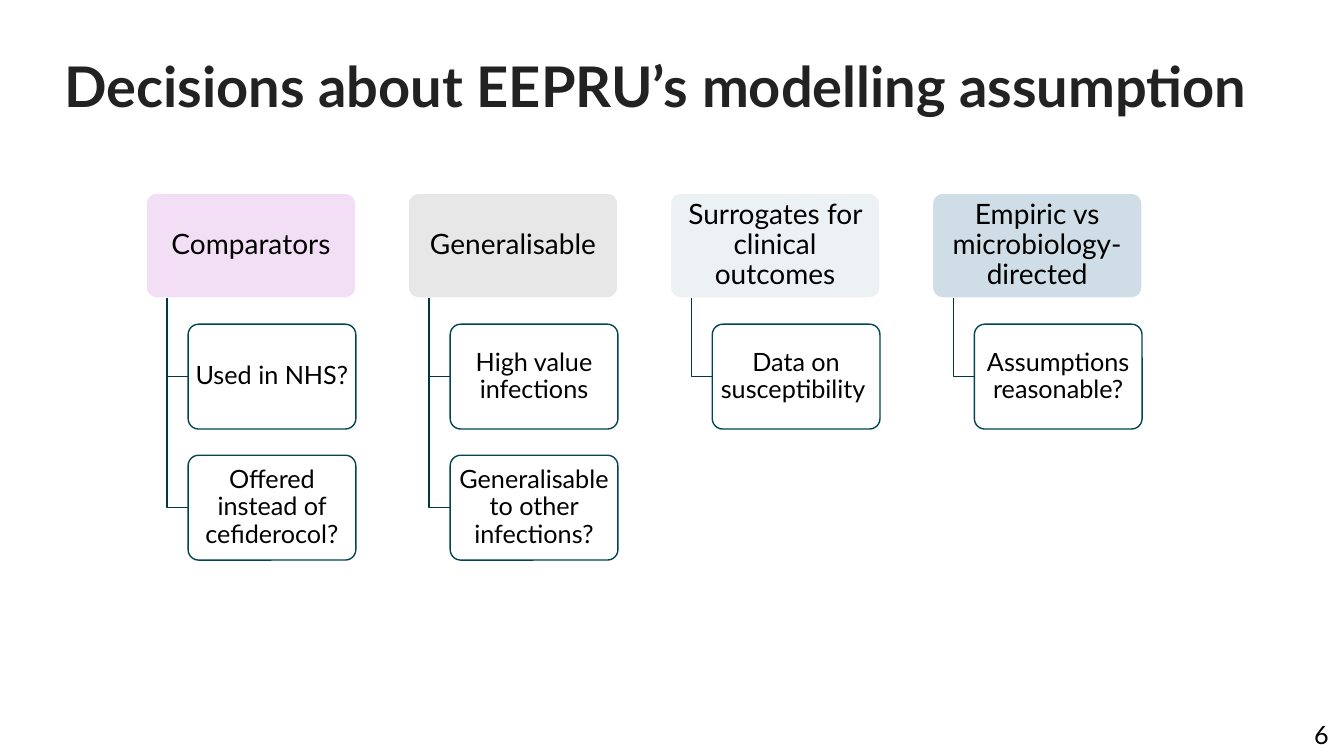
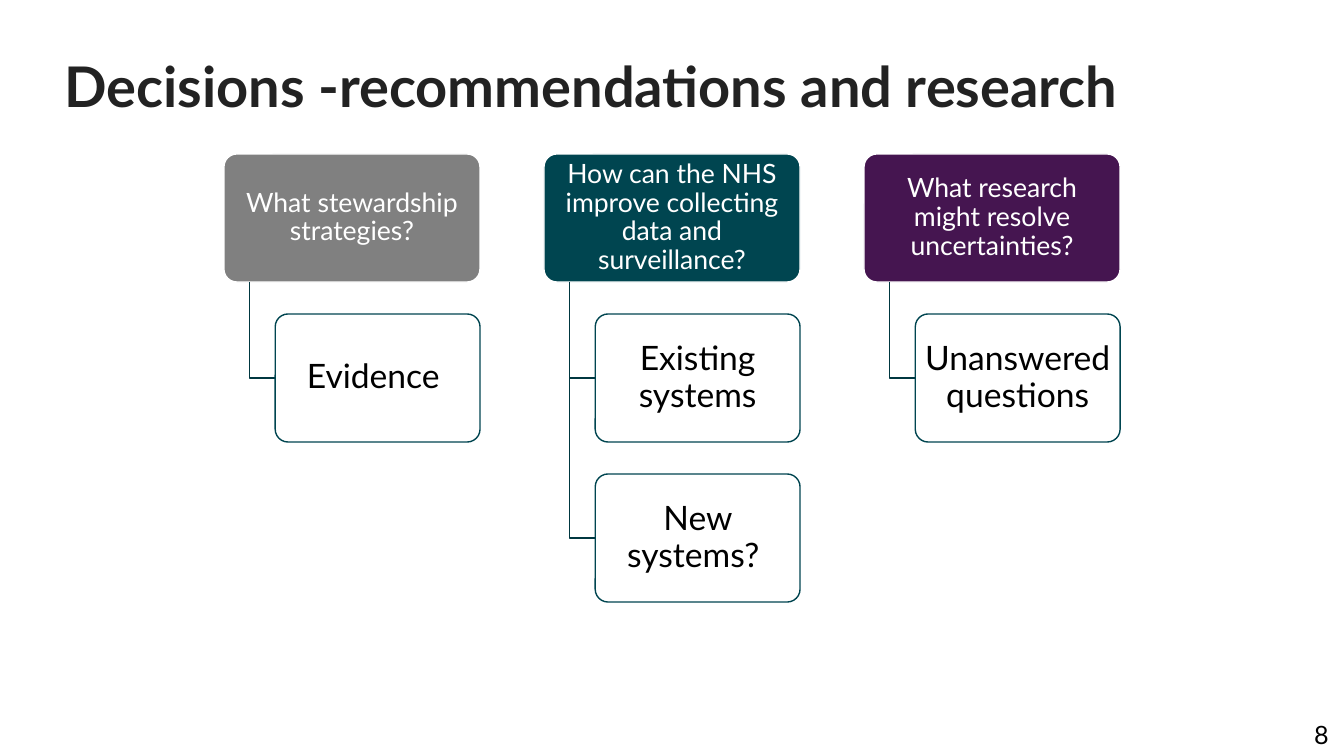
from dataclasses import dataclass

from pptx import Presentation
from pptx.dml.color import RGBColor
from pptx.enum.shapes import MSO_SHAPE as SHAPE
from pptx.enum.text import MSO_ANCHOR as ANCHOR, PP_ALIGN as ALIGN
from pptx.shapes.autoshape import Shape
from pptx.slide import Slide
from pptx.util import Pt

FONT = "Lato"
BLACK = RGBColor(0x00, 0x00, 0x00)
WHITE = RGBColor(0xFF, 0xFF, 0xFF)
TITLE_INK = RGBColor(0x22, 0x22, 0x22)
TEAL = RGBColor(0x00, 0x45, 0x50)
DARK_TEAL = RGBColor(0x00, 0x37, 0x40)
PURPLE = RGBColor(0x45, 0x15, 0x50)
GREY = RGBColor(0x80, 0x80, 0x80)
LILAC = RGBColor(0xF2, 0xDF, 0xF6)
LIGHT_GREY = RGBColor(0xE7, 0xE7, 0xE7)
PALE_TEAL = RGBColor(0xEC, 0xF2, 0xF3)
PALE_BLUE = RGBColor(0xCE, 0xDD, 0xE6)


@dataclass
class Topic:
    heading: str
    fill: RGBColor
    questions: list[str]


@dataclass
class Hierarchy:
    """Topic columns; every other measure follows from the heading width."""
    left: float
    top: float
    width: float
    heading_size: float
    heading_ink: RGBColor
    question_size: float
    topics: list[Topic]


@dataclass
class Page:
    number: int
    title: str
    hierarchy: Hierarchy


PAGES = [
    Page(6, "Decisions about EEPRU’s modelling assumption",
         Hierarchy(104.4, 138, 149.76, 20, BLACK, 18, [
             Topic("Comparators", LILAC,
                   ["Used in NHS?", "Offered instead of cefiderocol?"]),
             Topic("Generalisable", LIGHT_GREY,
                   ["High value infections", "Generalisable to other infections?"]),
             Topic("Surrogates for clinical outcomes", PALE_TEAL,
                   ["Data on susceptibility "]),
             Topic("Empiric vs microbiology-directed", PALE_BLUE,
                   ["Assumptions reasonable?"]),
         ])),
    Page(8, "Decisions -recommendations and research",
         Hierarchy(160, 110, 182.88, 19, WHITE, 24, [
             Topic("What stewardship strategies?", GREY, ["Evidence "]),
             Topic("How can the NHS improve collecting data and surveillance?", TEAL,
                   ["Existing systems", "New systems? "]),
             Topic("What research might resolve uncertainties?", PURPLE,
                   ["Unanswered questions"]),
         ])),
]


def write(s: Shape, text: str, size: float, ink: RGBColor, align: ALIGN,
          bold: bool = False, spacing: float = 1.0) -> None:
    tf = s.text_frame
    tf.word_wrap = True
    p = tf.paragraphs[0]
    p.text = text
    p.alignment = align
    p.line_spacing = spacing
    p.font.name, p.font.size, p.font.bold = FONT, Pt(size), bold
    p.font.color.rgb = ink


def set_line(s: Shape, color: RGBColor) -> None:
    s.shadow.inherit = False
    s.line.color.rgb = color
    s.line.width = Pt(1)


def add_box(slide: Slide, x: float, y: float, w: float, h: float, text: str,
            size: float, ink: RGBColor, fill: RGBColor, line: RGBColor) -> None:
    s = slide.shapes.add_shape(SHAPE.ROUNDED_RECTANGLE, Pt(x), Pt(y), Pt(w), Pt(h))
    s.adjustments[0] = 0.1
    s.fill.solid()
    s.fill.fore_color.rgb = fill
    set_line(s, line)
    tf = s.text_frame
    tf.vertical_anchor = ANCHOR.MIDDLE
    tf.margin_left = tf.margin_right = Pt(0.15 * size)
    tf.margin_top = tf.margin_bottom = Pt(0.1 * size)
    write(s, text, size, ink, ALIGN.CENTER, spacing=0.9)


def add_elbow(slide: Slide, x1: float, y1: float, x2: float, y2: float) -> None:
    """Open outline: down from the heading, then right to the question."""
    fb = slide.shapes.build_freeform(Pt(x1), Pt(y1))
    fb.add_line_segments([(Pt(x1), Pt(y2)), (Pt(x2), Pt(y2))], close=False)
    s = fb.convert_to_shape()
    s.fill.background()
    set_line(s, DARK_TEAL)


def add_hierarchy(slide: Slide, d: Hierarchy) -> None:
    w, h = d.width, d.width / 2
    pitch = 1.25 * h
    for col, topic in enumerate(d.topics):
        x = d.left + col * 1.25 * w
        trunk_x, box_x = x + 0.1 * w, x + 0.2 * w
        add_box(slide, x, d.top, w, h, topic.heading, d.heading_size,
                d.heading_ink, topic.fill, WHITE)
        for row, question in enumerate(topic.questions, 1):
            y = d.top + row * pitch
            add_elbow(slide, trunk_x, d.top + h, box_x, y + h / 2)
            add_box(slide, box_x, y, 0.8 * w, h, question,
                    d.question_size, BLACK, WHITE, TEAL)


def add_page(prs: Presentation, page: Page) -> None:
    slide = prs.slides.add_slide(prs.slide_layouts[6])

    # Page number and title
    number = slide.shapes.add_textbox(Pt(823.7), Pt(510.5), Pt(132.5), Pt(29))
    write(number, str(page.number), 18, BLACK, ALIGN.RIGHT)
    title = slide.shapes.add_textbox(Pt(39.1), Pt(38.5), Pt(888), Pt(101))
    write(title, page.title, 40, TITLE_INK, ALIGN.LEFT, bold=True, spacing=0.9)

    add_hierarchy(slide, page.hierarchy)


def main() -> None:
    prs = Presentation()
    prs.slide_width, prs.slide_height = Pt(960), Pt(540)
    for page in PAGES:
        add_page(prs, page)
    prs.save("out.pptx")


if __name__ == "__main__":
    main()
